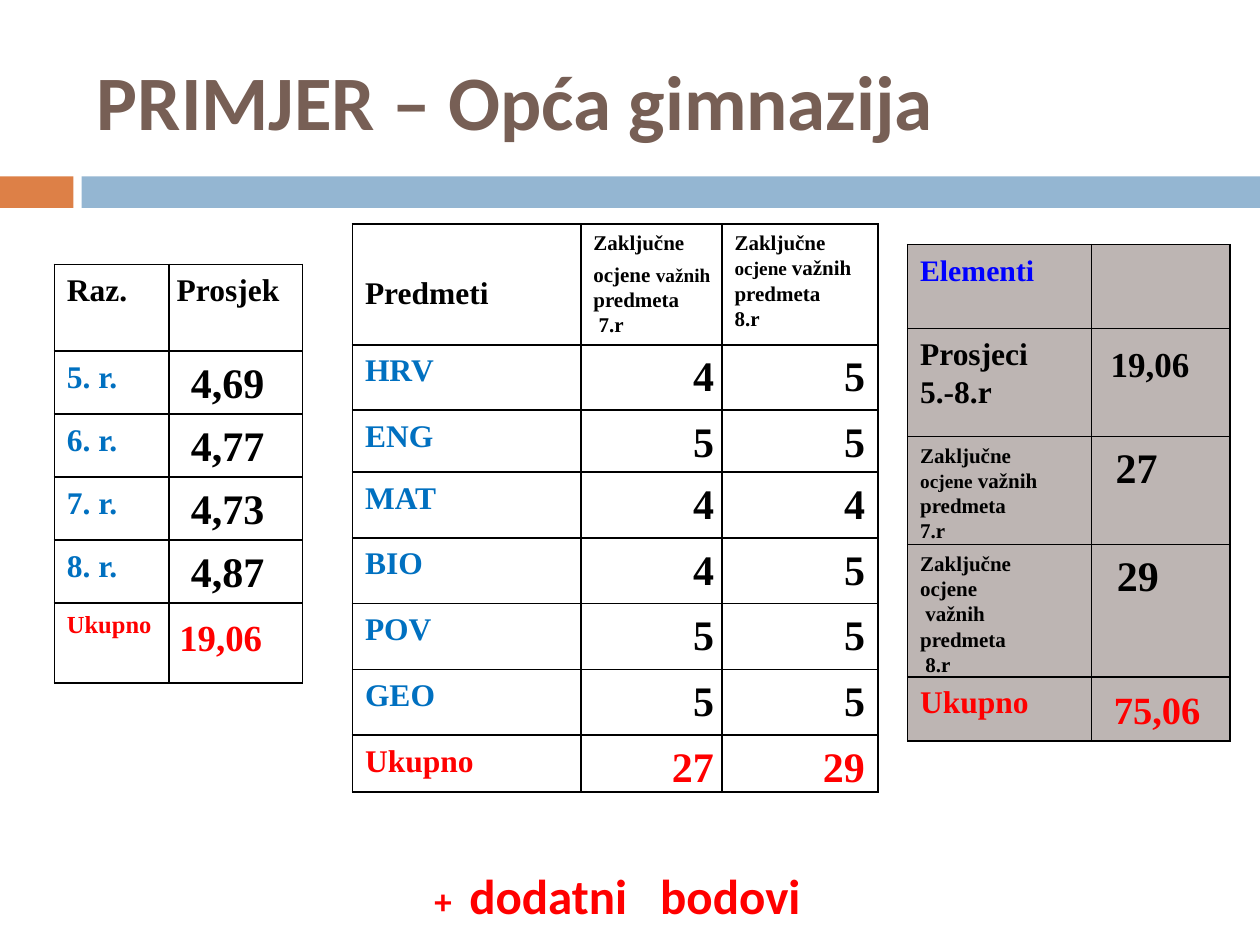
from lxml.etree import SubElement
from pptx import Presentation
from pptx.dml.color import RGBColor
from pptx.enum.shapes import MSO_SHAPE
from pptx.enum.text import MSO_ANCHOR, PP_ALIGN
from pptx.oxml.ns import qn
from pptx.util import Pt

BLACK = RGBColor(0x00, 0x00, 0x00)
WHITE = RGBColor(0xFF, 0xFF, 0xFF)
RED = RGBColor(0xFF, 0x00, 0x00)
BLUE = RGBColor(0x00, 0x00, 0xFF)
AZURE = RGBColor(0x00, 0x70, 0xC0)
BROWN = RGBColor(0x77, 0x5F, 0x55)
TAUPE = RGBColor(0xBD, 0xB5, 0xB3)
ORANGE = RGBColor(0xDD, 0x80, 0x47)
SKY = RGBColor(0x94, 0xB6, 0xD2)
SERIF, SANS = "Times New Roman", "Calibri"


# A line is (indent, leading, runs); a run is (text, size, colour); a cell is a list of lines
def line(text, size=18, color=BLACK, indent=7.2, lead=25):
    return (indent, lead, [(text, size, color)])


def small(text, indent=7.2, lead=14.4):
    return line(text, 12, BLACK, indent, lead)


def value(text, size=24, color=BLACK, indent=0):
    return [line(text, size, color, indent, 32.1)]


def mixed(first, second, lead=14.4):
    return (7.2, lead, [(first[0], first[1], BLACK), (second[0], second[1], BLACK)])


# Content
TITLE = "PRIMJER – Opća gimnazija"
BONUS = [("+", 20, 0), (" ", 20, 5.4), ("dodatni", 28, 0), (" ", 28, 12.6), ("bodovi", 28, 0)]
YEARS = [("5. r.", "4,69"), ("6. r.", "4,77"), ("7. r.", "4,73"), ("8. r.", "4,87")]
MARKS = [("HRV", 4, 5), ("ENG", 5, 5), ("MAT", 4, 4),
         ("BIO", 4, 5), ("POV", 5, 5), ("GEO", 5, 5)]

averages = [[[line("Raz.")], [line("Prosjek", indent=4.5)]]]
averages += [[[line(year, color=AZURE)], value(mean, indent=12.6)] for year, mean in YEARS]
averages += [[[line("Ukupno", 14, RED, lead=20.2)], value("19,06", 21, RED, 6)]]

subjects = [[
    [line("Predmeti")],
    [small("Zaključne", lead=17.9), mixed(("ocjene ", 12), ("važnih", 11), 17.9),
     small("predmeta"), small("7.r", 10.2)],
    [small("Zaključne", lead=17.9), mixed(("ocjene ", 11), ("važnih", 12)),
     small("predmeta"), small("8.r")],
]]
subjects += [[[line(name, color=AZURE)], value(str(seven)), value(str(eight))]
             for name, seven, eight in MARKS]
subjects += [[[line("Ukupno", color=RED)], value("27", color=RED), value("29", color=RED)]]

elements = [
    [[line("Elementi", 17, BLUE)], []],
    [[line("Prosjeci"), line("5.-8.r", lead=21.6)], value("19,06", 20, indent=10.8)],
    [[small("Zaključne", lead=17.9), mixed(("ocjene", 11), (" važnih", 12)),
      small("predmeta"), small("7.r")], value("27", indent=13.7)],
    [[small("Zaključne", lead=18), small("ocjene"), small("važnih", 10.2),
      small("predmeta"), small("8.r", 10.2)], value("29", indent=14.4)],
    [[line("Ukupno", color=RED)], value("75,06", 22, RED, 12.7)],
]

# Left, top, column widths, row heights, fill, rows
TABLES = [
    (31, 151, [65.5, 76.3], [49.7] + [36] * 4 + [45.6], WHITE, averages),
    (201.4, 128, [130.5, 80.7, 89.3],
     [69, 37.4, 35.4] + [37.6] * 4 + [32.4], WHITE, subjects),
    (518.6, 139.8, [105.2, 79], [48, 61.7, 61.7, 75.4, 36.6], TAUPE, elements),
]


def style(run, size, color, font):
    run.font.size, run.font.name, run.font.bold = Pt(size), font, True
    run.font.color.rgb = color


def border(cell):
    props = cell._tc.get_or_add_tcPr()
    for place, side in enumerate(("a:lnL", "a:lnR", "a:lnT", "a:lnB")):
        edge = props.makeelement(qn(side), {"w": str(Pt(1))})
        fill = SubElement(edge, qn("a:solidFill"))
        SubElement(fill, qn("a:srgbClr"), val=str(BLACK))
        props.insert(place, edge)


def write(cell, lines):
    frame = cell.text_frame
    frame.text = "\n".join("".join(run[0] for run in runs) for _, _, runs in lines)
    for para, (indent, lead, runs) in zip(frame.paragraphs, lines):
        para.line_spacing = Pt(lead)
        para._p.get_or_add_pPr().set("marL", str(Pt(indent)))
        para.text = ""
        for text, size, color in runs:
            run = para.add_run()
            run.text = text
            style(run, size, color, SERIF)


def draw(slide, left, top, widths, heights, fill, rows):
    table = slide.shapes.add_table(len(heights), len(widths), Pt(left), Pt(top),
                                   Pt(sum(widths)), Pt(sum(heights))).table
    for col, width in zip(table.columns, widths):
        col.width = Pt(width)
    for row, height, cells in zip(table.rows, heights, rows):
        row.height = Pt(height)
        for cell, lines in zip(row.cells, cells):
            cell.margin_left = cell.margin_right = cell.margin_top = cell.margin_bottom = 0
            cell.fill.solid()
            cell.fill.fore_color.rgb = fill
            border(cell)
            write(cell, lines)
    return table


def box(slide, left, top, width, height):
    frame = slide.shapes.add_textbox(Pt(left), Pt(top), Pt(width), Pt(height)).text_frame
    frame.word_wrap = True
    return frame


def main():
    deck = Presentation()
    deck.slide_width, deck.slide_height = Pt(720), Pt(540)
    slide = deck.slides.add_slide(deck.slide_layouts[6])

    # Bars under the title
    for left, width, color in ((0, 42, ORANGE), (46.6, 673.4, SKY)):
        bar = slide.shapes.add_shape(MSO_SHAPE.RECTANGLE, Pt(left), Pt(100.8),
                                     Pt(width), Pt(18))
        bar.shadow.inherit = False
        bar.fill.solid()
        bar.fill.fore_color.rgb = color
        bar.line.fill.background()

    # Tables
    _, grid, _ = [draw(slide, *table) for table in TABLES]
    grid.cell(0, 0).margin_top = Pt(25)
    for row in range(1, len(subjects)):
        for col, gap in ((1, 4.6), (2, 7.6)):
            cell = grid.cell(row, col)
            cell.margin_right = Pt(gap)
            cell.text_frame.paragraphs[0].alignment = PP_ALIGN.RIGHT

    # Extra points, with wider gaps between the words
    para = box(slide, 241.2, 491, 295.2, 41).paragraphs[0]
    for text, size, gap in BONUS:
        run = para.add_run()
        run.text = text
        style(run, size, RED, SANS)
        if gap:
            run._r.get_or_add_rPr().set("spc", str(round(gap * 100)))

    # Title
    frame = box(slide, 48.2, 18, 642.2, 77.8)
    frame.vertical_anchor = MSO_ANCHOR.MIDDLE
    frame.text = TITLE
    style(frame.paragraphs[0].runs[0], 44, BROWN, SANS)

    deck.save("out.pptx")


if __name__ == "__main__":
    main()
